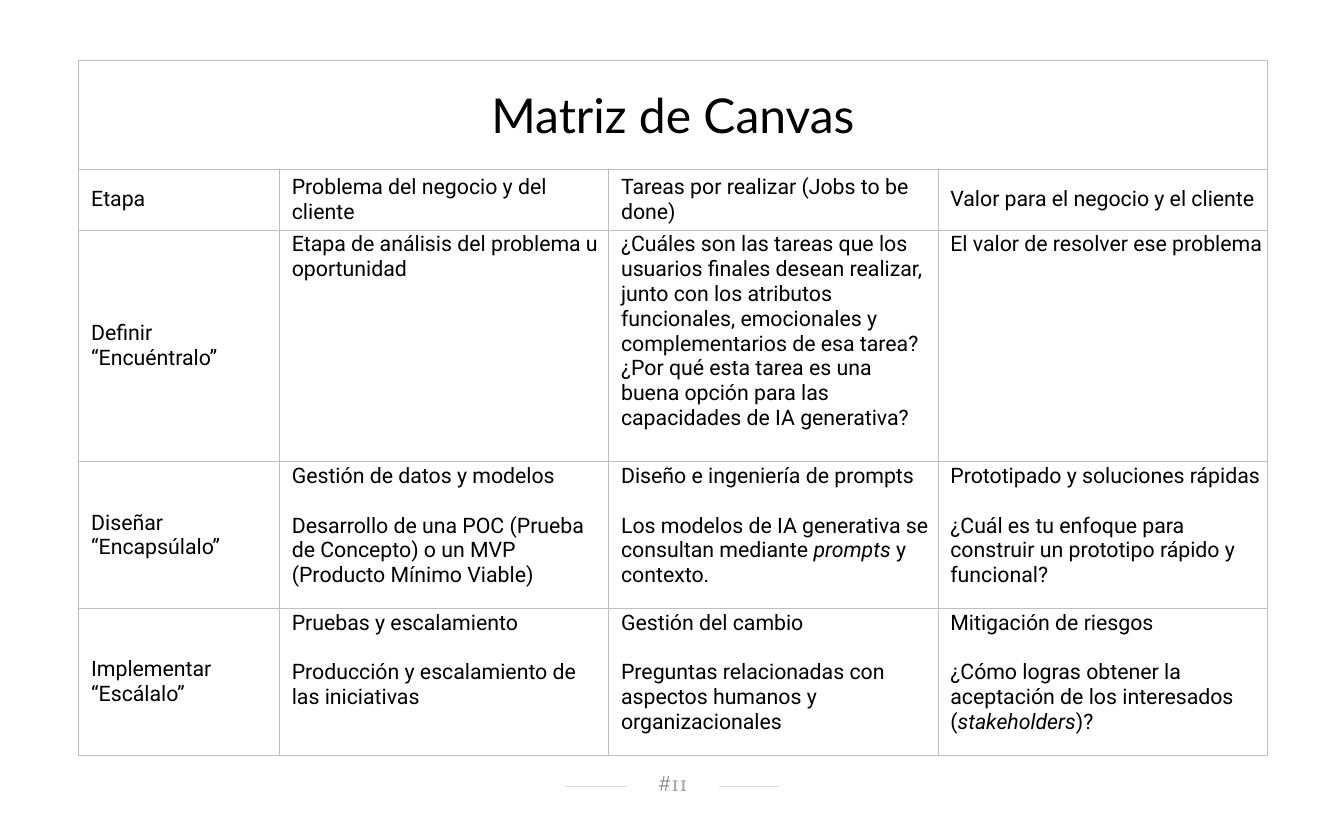
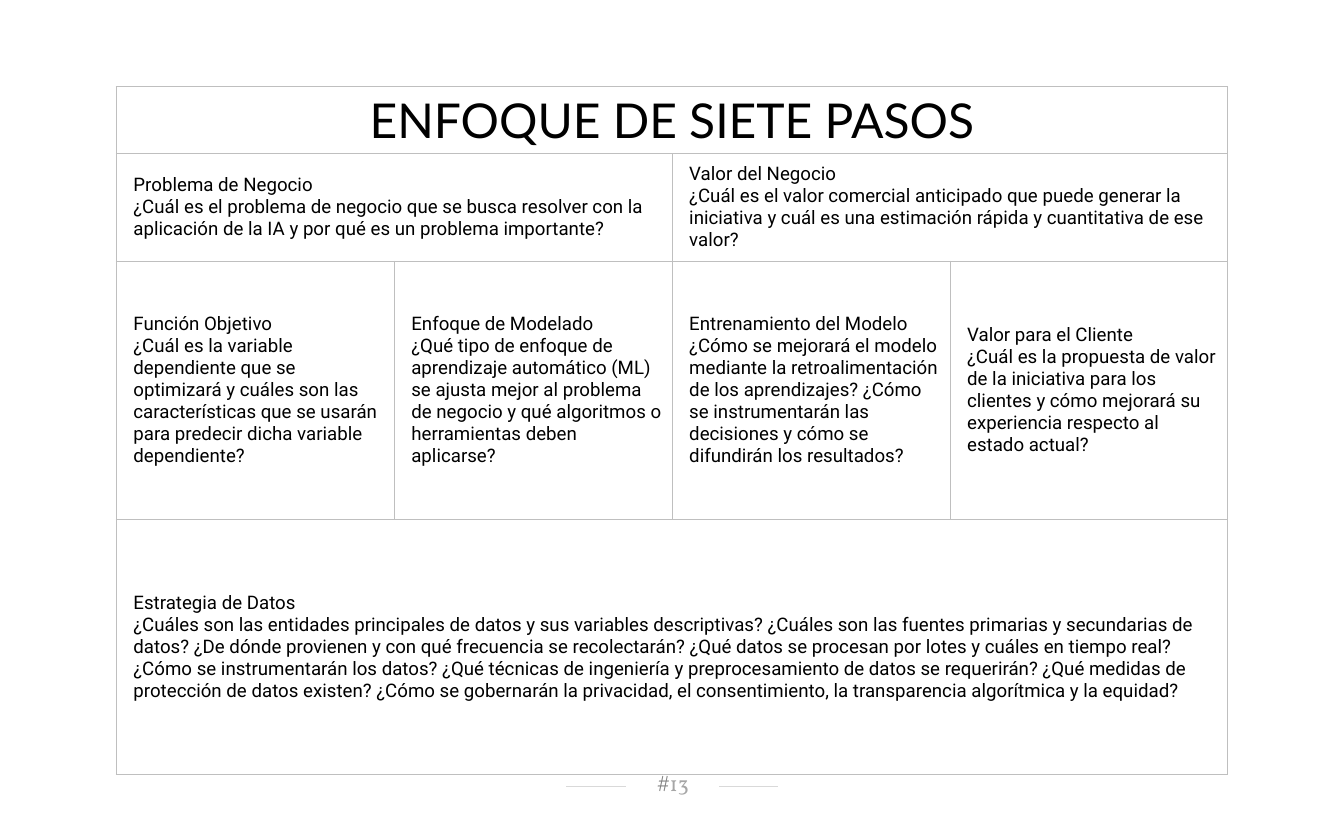
from dataclasses import dataclass

from lxml.etree import SubElement
from pptx import Presentation
from pptx.dml.color import RGBColor
from pptx.enum.shapes import MSO_CONNECTOR
from pptx.enum.text import MSO_ANCHOR, PP_ALIGN
from pptx.oxml.ns import qn
from pptx.slide import Slide
from pptx.table import _Cell
from pptx.util import Inches, Pt


# Theme
@dataclass(frozen=True)
class Theme:
    ink: str = "000000"
    grid: str = "BFBFBF"
    footer_rule: str = "D9D9D9"
    footer_mark: str = "808080"
    footer_number: str = "A6A6A6"
    title_font: str = "Lato"
    body_font: str = "Roboto"
    footer_font: str = "Vollkorn"
    title_size: float = 36
    footer_size: float = 16
    grid_width: float = 0.5
    rule_width: float = 0.75
    indent: float = 0.08


THEME = Theme()


# Content model: text between asterisks is set in italics
@dataclass(frozen=True)
class Entry:
    paragraphs: tuple[str, ...]
    span: int = 1
    top: bool = False
    spaced: bool = False


@dataclass(frozen=True)
class Matrix:
    title: str
    number: int
    left: float
    top: float
    columns: tuple[float, ...]
    rows: tuple[float, ...]
    body_size: float
    margins: tuple[float, float]
    entries: tuple[tuple[Entry, ...], ...]


def stage(*paragraphs: str) -> Entry:
    return Entry(paragraphs)


def detail(*paragraphs: str) -> Entry:
    return Entry(paragraphs, top=True)


def topic(heading: str, explanation: str) -> Entry:
    return Entry((heading, explanation), top=True, spaced=True)


def step(heading: str, question: str, span: int = 1) -> Entry:
    return Entry((heading, question), span=span)


CANVAS = Matrix(
    "Matriz de Canvas", 11, 0.82, 0.63,
    columns=(2.09, 3.43, 3.43, 3.43), rows=(1.13, 0.64, 2.41, 1.53, 1.53),
    body_size=16, margins=(0.05, 0.02),
    entries=(
        (stage("Etapa"),
         stage("Problema del negocio y del cliente"),
         stage("Tareas por realizar (Jobs to be done)"),
         stage("Valor para el negocio y el cliente")),
        (stage("Definir", "“Encuéntralo”"),
         detail("Etapa de análisis del problema u oportunidad"),
         detail("¿Cuáles son las tareas que los usuarios finales desean realizar, junto con "
                "los atributos funcionales, emocionales y complementarios de esa tarea?",
                "¿Por qué esta tarea es una buena opción para las capacidades de IA "
                "generativa?"),
         detail("El valor de resolver ese problema")),
        (stage("Diseñar", "“Encapsúlalo”"),
         topic("Gestión de datos y modelos",
               "Desarrollo de una POC (Prueba de Concepto) o un MVP (Producto Mínimo Viable)"),
         topic("Diseño e ingeniería de prompts",
               "Los modelos de IA generativa se consultan mediante *prompts* y contexto."),
         topic("Prototipado y soluciones rápidas",
               "¿Cuál es tu enfoque para construir un prototipo rápido y funcional?")),
        (stage("Implementar", "“Escálalo”"),
         topic("Pruebas y escalamiento", "Producción y escalamiento de las iniciativas"),
         topic("Gestión del cambio",
               "Preguntas relacionadas con aspectos humanos y organizacionales"),
         topic("Mitigación de riesgos",
               "¿Cómo logras obtener la aceptación de los interesados (*stakeholders*)?")),
    ),
)

SEVEN_STEPS = Matrix(
    "ENFOQUE DE SIETE PASOS", 13, 1.21, 0.9,
    columns=(11.58 / 4,) * 4, rows=(0.7, 1.12, 2.69, 2.66),
    body_size=14, margins=(0.1, 0.05),
    entries=(
        (step("Problema de Negocio",
              "¿Cuál es el problema de negocio que se busca resolver con la aplicación de la "
              "IA y por qué es un problema importante?", span=2),
         step("Valor del Negocio",
              "¿Cuál es el valor comercial anticipado que puede generar la iniciativa y cuál "
              "es una estimación rápida y cuantitativa de ese valor?", span=2)),
        (step("Función Objetivo",
              "¿Cuál es la variable dependiente que se optimizará y cuáles son las "
              "características que se usarán para predecir dicha variable dependiente?"),
         step("Enfoque de Modelado",
              "¿Qué tipo de enfoque de aprendizaje automático (ML) se ajusta mejor al problema "
              "de negocio y qué algoritmos o herramientas deben aplicarse?"),
         step("Entrenamiento del Modelo",
              "¿Cómo se mejorará el modelo mediante la retroalimentación de los aprendizajes? "
              "¿Cómo se instrumentarán las decisiones y cómo se difundirán los resultados?"),
         step("Valor para el Cliente",
              "¿Cuál es la propuesta de valor de la iniciativa para los clientes y cómo "
              "mejorará su experiencia respecto al estado actual?")),
        (step("Estrategia de Datos",
              "¿Cuáles son las entidades principales de datos y sus variables descriptivas? "
              "¿Cuáles son las fuentes primarias y secundarias de datos? ¿De dónde provienen y "
              "con qué frecuencia se recolectarán? ¿Qué datos se procesan por lotes y cuáles "
              "en tiempo real? ¿Cómo se instrumentarán los datos? ¿Qué técnicas de ingeniería "
              "y preprocesamiento de datos se requerirán? ¿Qué medidas de protección de datos "
              "existen? ¿Cómo se gobernarán la privacidad, el consentimiento, la "
              "transparencia algorítmica y la equidad?", span=4),),
    ),
)


# Text
def add_run(paragraph, text: str, font: str, size: float, color: str,
            italic: bool = False) -> None:
    run = paragraph.add_run()
    run.text = text
    run.font.name = font
    run.font.size = Pt(size)
    run.font.color.rgb = RGBColor.from_string(color)
    run.font.italic = italic


def write_title(cell: _Cell, title: str) -> None:
    cell.vertical_anchor = MSO_ANCHOR.MIDDLE
    heading = cell.text_frame.paragraphs[0]
    heading.alignment = PP_ALIGN.CENTER
    add_run(heading, title, THEME.title_font, THEME.title_size, THEME.ink)


def write_entry(cell: _Cell, entry: Entry, size: float) -> None:
    cell.vertical_anchor = MSO_ANCHOR.TOP if entry.top else MSO_ANCHOR.MIDDLE
    frame = cell.text_frame
    for position, text in enumerate(entry.paragraphs):
        paragraph = frame.add_paragraph() if position else frame.paragraphs[0]
        properties = paragraph._p.get_or_add_pPr()
        properties.set("marL", str(Inches(THEME.indent)))
        properties.set("indent", "0")
        if position and entry.spaced:
            paragraph.space_before = Pt(size * 1.17)
        for part, words in enumerate(text.split("*")):
            add_run(paragraph, words, THEME.body_font, size, THEME.ink, italic=part % 2 == 1)


# Table
def style_cell(cell: _Cell, margins: tuple[float, float]) -> None:
    cell.margin_left = cell.margin_right = Inches(margins[0])
    cell.margin_top = cell.margin_bottom = Inches(margins[1])
    properties = cell._tc.get_or_add_tcPr()
    for side in ("a:lnL", "a:lnR", "a:lnT", "a:lnB"):
        border = SubElement(properties, qn(side), w=str(Pt(THEME.grid_width)))
        fill = SubElement(border, qn("a:solidFill"))
        SubElement(fill, qn("a:srgbClr"), val=THEME.grid)
    cell.fill.background()


def add_matrix(slide: Slide, matrix: Matrix) -> None:
    table = slide.shapes.add_table(
        len(matrix.rows), len(matrix.columns), Inches(matrix.left), Inches(matrix.top),
        Inches(sum(matrix.columns)), Inches(sum(matrix.rows))).table
    table.first_row = table.horz_banding = False
    for column, width in zip(table.columns, matrix.columns):
        column.width = Inches(width)
    for row, height in zip(table.rows, matrix.rows):
        row.height = Inches(height)
    for cell in table.iter_cells():
        style_cell(cell, matrix.margins)

    table.cell(0, 0).merge(table.cell(0, len(matrix.columns) - 1))
    write_title(table.cell(0, 0), matrix.title)
    for row_index, entries in enumerate(matrix.entries, start=1):
        column_index = 0
        for entry in entries:
            cell = table.cell(row_index, column_index)
            column_index += entry.span
            if entry.span > 1:
                cell.merge(table.cell(row_index, column_index - 1))
            write_entry(cell, entry, matrix.body_size)


# Footer
def add_footer(slide: Slide, number: int) -> None:
    for start, end in ((5.9, 6.52), (7.49, 8.1)):
        rule = slide.shapes.add_connector(
            MSO_CONNECTOR.STRAIGHT, Inches(start), Inches(8.19), Inches(end), Inches(8.19))
        rule.line.color.rgb = RGBColor.from_string(THEME.footer_rule)
        rule.line.width = Pt(THEME.rule_width)
        SubElement(rule._element.spPr, qn("a:effectLst"))

    frame = slide.shapes.add_textbox(
        Inches(6.51), Inches(8.04), Inches(0.98), Inches(0.26)).text_frame
    frame.word_wrap = True
    frame.vertical_anchor = MSO_ANCHOR.MIDDLE
    frame.margin_left, frame.margin_right = Inches(0.12), Inches(0.1)
    frame.margin_top, frame.margin_bottom = Inches(0.02), Inches(0.05)
    page = frame.paragraphs[0]
    page.alignment = PP_ALIGN.CENTER
    for text, color in (("#", THEME.footer_mark), (str(number), THEME.footer_number)):
        add_run(page, text, THEME.footer_font, THEME.footer_size, color)


def main() -> None:
    deck = Presentation()
    deck.slide_width, deck.slide_height = Inches(14), Inches(8.5)
    for matrix in (CANVAS, SEVEN_STEPS):
        slide = deck.slides.add_slide(deck.slide_layouts[6])
        add_footer(slide, matrix.number)
        add_matrix(slide, matrix)
    deck.save("out.pptx")


if __name__ == "__main__":
    main()
